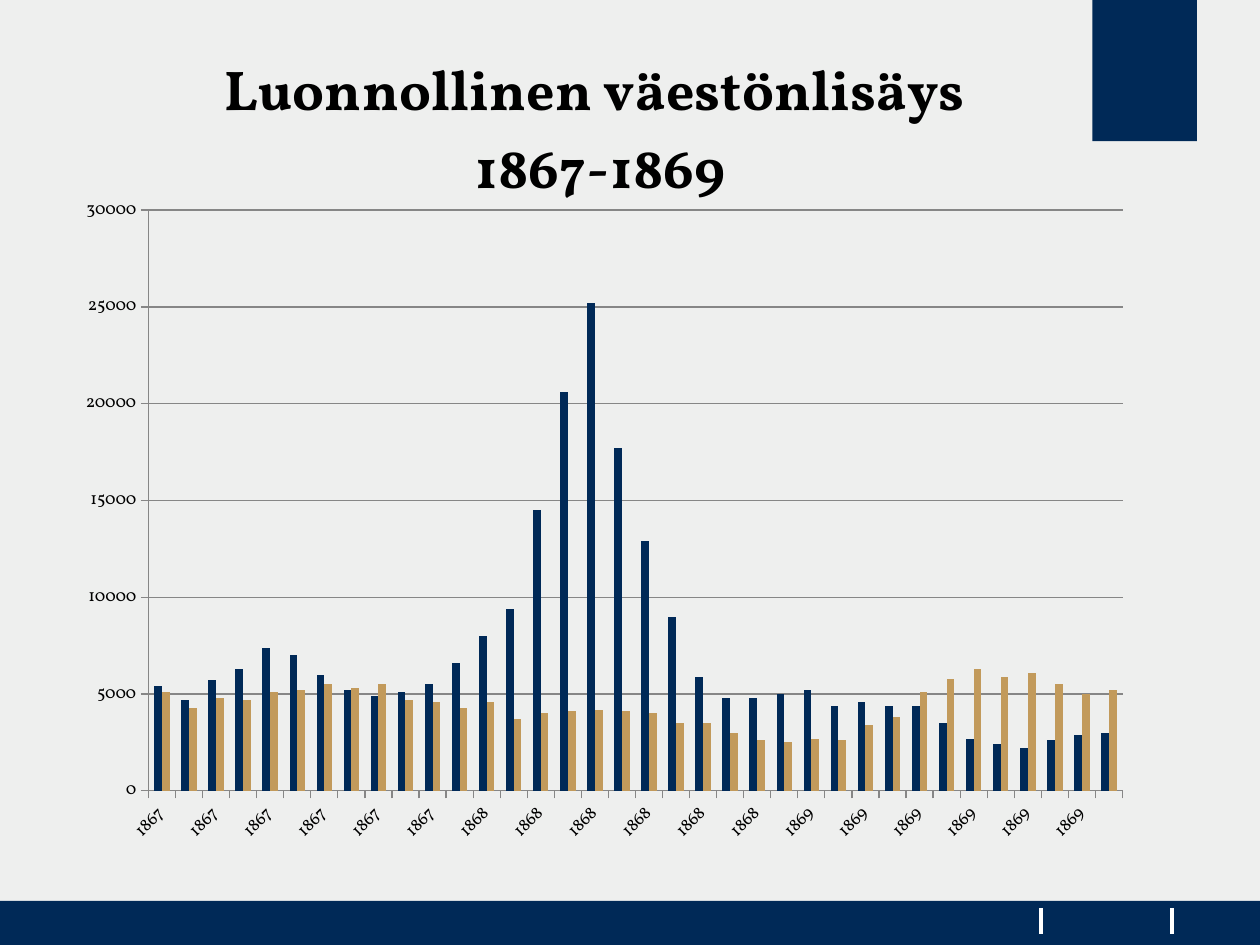
from lxml import etree
from pptx import Presentation
from pptx.chart import data
from pptx.dml.color import RGBColor
from pptx.enum import chart as charts, shapes
from pptx.oxml import parse_xml
from pptx.oxml.ns import nsdecls, qn
from pptx.util import Inches, Pt

FONT = "Vollkorn"
COLORS = {"background": "EEEFEE", "navy": "002957", "gold": "C29A5B",
          "white": "FFFFFF", "black": "000000", "grid": "868686"}
TITLE_LINES = ["Luonnollinen väestönlisäys ", "1867-1869"]
YEARS = ["1867", "1868", "1869"]
SERIES = [
    ("Series 1", "navy", [
        5400, 4700, 5700, 6300, 7400, 7000, 6000, 5200, 4900, 5100, 5500, 6600,
        8000, 9400, 14500, 20600, 25200, 17700, 12900, 9000, 5900, 4800, 4800, 5000,
        5200, 4400, 4600, 4400, 4400, 3500, 2700, 2400, 2200, 2600, 2900, 3000]),
    ("Series 2", "gold", [
        5100, 4300, 4800, 4700, 5100, 5200, 5500, 5300, 5500, 4700, 4600, 4300,
        4600, 3700, 4000, 4100, 4200, 4100, 4000, 3500, 3500, 3000, 2600, 2500,
        2700, 2600, 3400, 3800, 5100, 5800, 6300, 5900, 6100, 5500, 5000, 5200]),
]
BLOCKS = [(8.67, 0, 0.83, 1.12), (0, 7.15, 10, 0.35)]
FOOTER_MARKS = [9.3, 8.26]
CHART_BOX = (0.28, 0.21, 8.98, 6.69)
PLOT = {"x": 0.1, "y": 0.218, "w": 0.861, "h": 0.689}


def color(name):
    return RGBColor.from_string(COLORS[name])


def format_font(font, size, bold=False):
    font.name = FONT
    font.size = Pt(size)
    font.bold = bold
    font.color.rgb = color("black")


def format_line(line, name, width):
    line.color.rgb = color(name)
    line.width = Pt(width)


def add_decoration(slide):
    for box in BLOCKS:
        shape = slide.shapes.add_shape(shapes.MSO_SHAPE.RECTANGLE, *map(Inches, box))
        shape.shadow.inherit = False
        shape.fill.solid()
        shape.fill.fore_color.rgb = color("navy")
        shape.line.fill.background()
    for x in FOOTER_MARKS:
        mark = slide.shapes.add_connector(
            shapes.MSO_CONNECTOR.STRAIGHT, Inches(x), Inches(7.21), Inches(x), Inches(7.41))
        format_line(mark.line, "white", 2)
        etree.SubElement(mark._element.spPr, qn("a:effectLst"))


def add_title(chart):
    frame = chart.chart_title.text_frame
    frame.text = "\n".join(TITLE_LINES)
    for paragraph in frame.paragraphs:
        for run in paragraph.runs:
            format_font(run.font, 32, bold=True)
    chart.chart_title.include_in_layout = False


def set_plot_layout(chart):
    modes = "".join(f'<c:{side}Mode val="edge"/>' for side in "xy")
    values = "".join(f'<c:{side} val="{value}"/>' for side, value in PLOT.items())
    layout = parse_xml(
        f'<c:layout {nsdecls("c")}><c:manualLayout><c:layoutTarget val="inner"/>'
        f'{modes}{values}</c:manualLayout></c:layout>')
    plot_area = chart._chartSpace.chart.plotArea
    for old in plot_area.findall(qn("c:layout")):
        plot_area.remove(old)
    plot_area.insert(0, layout)


def format_axes(chart):
    for axis in (chart.category_axis, chart.value_axis):
        axis.major_tick_mark = charts.XL_TICK_MARK.OUTSIDE
        axis.minor_tick_mark = charts.XL_TICK_MARK.NONE
        format_font(axis.tick_labels.font, 10)
        format_line(axis.format.line, "grid", 0.75)
    value_axis = chart.value_axis
    value_axis.minimum_scale = 0
    value_axis.maximum_scale = 30000
    value_axis.major_unit = 5000
    value_axis.has_major_gridlines = True
    format_line(value_axis.major_gridlines.format.line, "grid", 0.75)
    category_xml = chart.category_axis._element
    category_xml.find(qn("c:txPr")).find(qn("a:bodyPr")).set("rot", "-2700000")
    skip = parse_xml(f'<c:tickLblSkip {nsdecls("c")} val="2"/>')
    category_xml.find(qn("c:noMultiLvlLbl")).addprevious(skip)


def add_population_chart(slide):
    chart_data = data.CategoryChartData()
    chart_data.categories = [year for year in YEARS for _ in range(12)]
    for name, _, values in SERIES:
        chart_data.add_series(name, values)
    chart = slide.shapes.add_chart(
        charts.XL_CHART_TYPE.COLUMN_CLUSTERED, *map(Inches, CHART_BOX), chart_data).chart
    format_font(chart.font, 10)
    chart.has_legend = False
    plot = chart.plots[0]
    plot.gap_width = 150
    plot.overlap = 0
    plot.vary_by_categories = False
    for series, (_, fill, _) in zip(plot.series, SERIES):
        series.format.fill.solid()
        series.format.fill.fore_color.rgb = color(fill)
    add_title(chart)
    set_plot_layout(chart)
    format_axes(chart)


def main():
    presentation = Presentation()
    presentation.slide_width = Inches(10)
    presentation.slide_height = Inches(7.5)
    slide = presentation.slides.add_slide(presentation.slide_layouts[6])
    slide.background.fill.solid()
    slide.background.fill.fore_color.rgb = color("background")
    add_decoration(slide)
    add_population_chart(slide)
    presentation.save("out.pptx")


if __name__ == "__main__":
    main()
